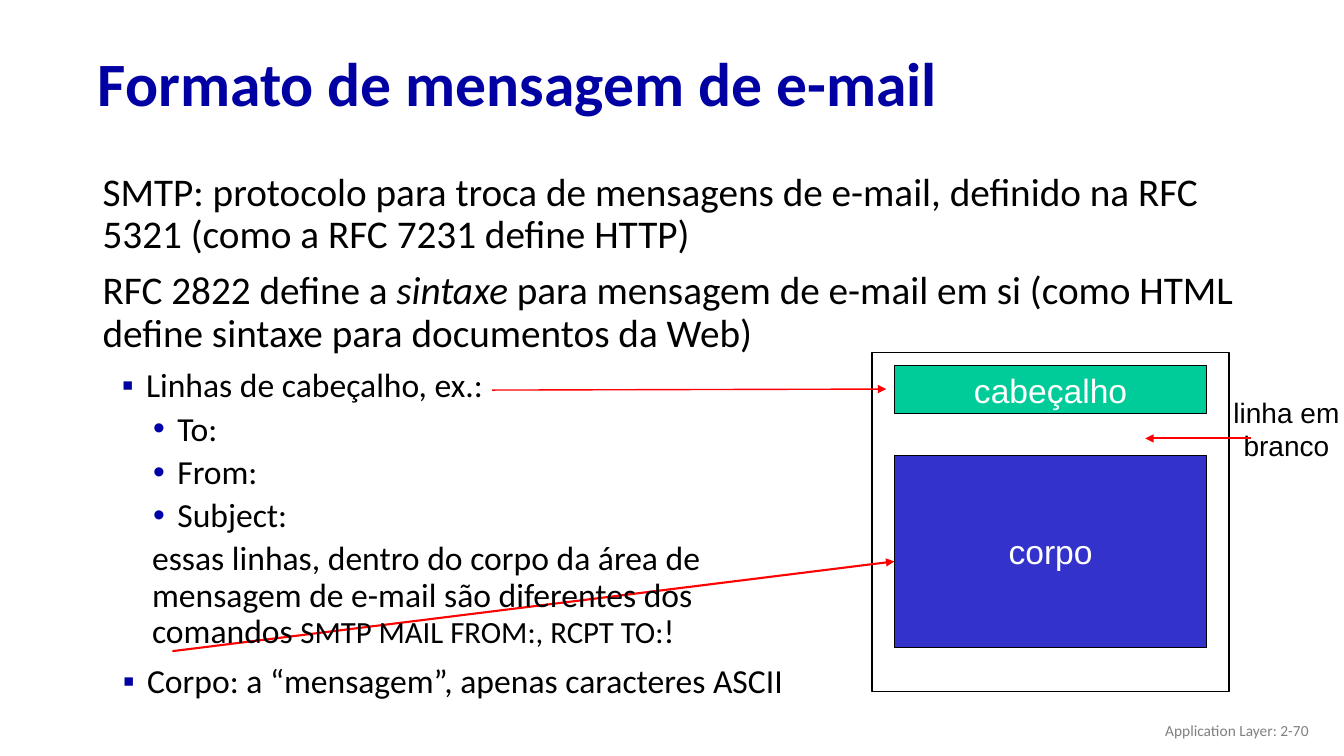
"""Builds the slide on the format of an e-mail message."""
from dataclasses import dataclass

from lxml.etree import SubElement
from pptx import Presentation
from pptx.dml.color import RGBColor
from pptx.enum.shapes import MSO_CONNECTOR as Connector, MSO_SHAPE as Shape
from pptx.enum.text import MSO_ANCHOR as Anchor, PP_ALIGN as Align
from pptx.oxml.ns import qn
from pptx.util import Inches, Pt


@dataclass(frozen=True)
class Theme:
    """Colours, fonts and type sizes of the slide."""
    navy: str = "0000A3"
    bullet_blue: str = "0000A8"
    black: str = "000000"
    white: str = "FFFFFF"
    green: str = "00CC99"
    blue: str = "3333CC"
    red: str = "FF0000"
    grey: str = "808080"
    body_font: str = "Calibri"
    diagram_font: str = "Arial"
    title: int = 44
    intro: int = 28
    detail: int = 24
    command: int = 22
    note: int = 20
    footer: int = 11


THEME = Theme()


def rgb(code):
    """Return the colour for a hex code."""
    return RGBColor.from_string(code)


def set_font(target, size, color, face=THEME.body_font, bold=None):
    """Set the font of a paragraph."""
    font = target.font
    font.size, font.name, font.bold = Pt(size), face, bold
    font.color.rgb = rgb(color)


def set_indent(paragraph, margin, hanging=0, bullet=None, color=THEME.navy):
    """Indent a paragraph and give it a bullet, if any."""
    props = paragraph._p.get_or_add_pPr()
    props.set("marL", str(Inches(margin)))
    props.set("indent", str(Inches(hanging)))
    if bullet:
        tint = SubElement(props, qn("a:buClr"))
        SubElement(tint, qn("a:srgbClr"), val=color)
        SubElement(props, qn("a:buFont"), typeface=THEME.diagram_font)
        SubElement(props, qn("a:buChar"), char=bullet)


def add_text_box(slide, box, anchor=Anchor.TOP, wrap=True):
    """Add an empty text box and return its frame."""
    frame = slide.shapes.add_textbox(*map(Inches, box)).text_frame
    frame.word_wrap = wrap
    frame.vertical_anchor = anchor
    return frame


def next_paragraph(frame, space):
    """Return the first paragraph, or a new one set off by a space."""
    first = frame.paragraphs[0]
    if not first.runs:
        first.line_spacing = 0.9
        return first
    paragraph = frame.add_paragraph()
    paragraph.line_spacing = 0.9
    paragraph.space_before = Pt(space)
    return paragraph


def add_runs(paragraph, *texts):
    """Add runs to a paragraph and return them."""
    runs = [paragraph.add_run() for _ in texts]
    for run, text in zip(runs, texts):
        run.text = text
    return runs


def add_line_of_text(slide, box, text, size, color, align, bold=None):
    """Add a single vertically centred line of text."""
    line = add_text_box(slide, box, Anchor.MIDDLE).paragraphs[0]
    line.text, line.alignment = text, align
    set_font(line, size, color, bold=bold)


def add_block(slide, box, width, fill=None, label=None):
    """Add an outlined rectangle of the message diagram."""
    block = slide.shapes.add_shape(Shape.RECTANGLE, *map(Inches, box))
    block.shadow.inherit = False
    block.line.color.rgb = rgb(THEME.black)
    block.line.width = Pt(width)
    if fill:
        block.fill.solid()
        block.fill.fore_color.rgb = rgb(fill)
    else:
        block.fill.background()
    if label:
        frame = block.text_frame
        frame.word_wrap = False
        frame.vertical_anchor = Anchor.MIDDLE
        caption = frame.paragraphs[0]
        caption.text, caption.alignment = label, Align.CENTER
        set_font(caption, THEME.detail, THEME.white, THEME.diagram_font)


def add_arrow(slide, start, end, width=1.5):
    """Add a red arrow between two points."""
    arrow = slide.shapes.add_connector(
        Connector.STRAIGHT, *map(Inches, (*start, *end)))
    arrow.line.color.rgb = rgb(THEME.red)
    arrow.line.width = Pt(width)
    SubElement(arrow.line._get_or_add_ln(), qn("a:tailEnd"), type="triangle")
    SubElement(arrow._element.spPr, qn("a:effectLst"))


def add_intro(slide):
    """Add the two opening statements."""
    frame = add_text_box(slide, (0.9, 1.66, 11.7, 2.03))
    statements = (
        ("SMTP: protocolo para troca de mensagens de e-mail, definido na "
         "RFC 5321 (como a RFC 7231 define HTTP)",),
        ("RFC 2822 define a ", "sintaxe", " para mensagem de e-mail em si "
         "(como HTML define sintaxe para documentos da Web)"),
    )
    for texts in statements:
        statement = next_paragraph(frame, 10)
        set_indent(statement, 0.02)
        set_font(statement, THEME.intro, THEME.black)
        for run in add_runs(statement, *texts)[1:2]:
            run.font.italic = True


def add_details(slide):
    """Add the bulleted list on header lines and body."""
    frame = add_text_box(slide, (0.97, 3.61, 6.98, 3.32))

    def add_item(texts, level, *indent):
        item = next_paragraph(frame, 5 if level else 10)
        item.level = level
        set_indent(item, *indent)
        set_font(item, THEME.detail, THEME.black)
        return add_runs(item, *texts)

    add_item(["Linhas de cabeçalho, ex.:"], 0, 0.38, -0.24, "▪")
    for field in ("To:", "From:", "Subject:"):
        add_item([field], 1, 0.69, -0.24, "•", THEME.bullet_blue)
    remark = ("essas linhas, dentro do corpo da área de mensagem de e-mail "
              "são diferentes dos comandos ", "SMTP MAIL FROM:, RCPT TO:", "!")
    commands = add_item(remark, 1, 0.44)[1]
    commands.font.size = Pt(THEME.command)
    add_item(["Corpo: a “mensagem”, apenas caracteres ASCII"],
             0, 0.39, -0.24, "▪")


def add_blank_line_note(slide):
    """Add the note that names the blank line."""
    frame = add_text_box(slide, (12.13, 3.87, 1.26, 0.77), wrap=False)
    frame.text = "linha em\nbranco"
    for line in frame.paragraphs:
        line.alignment = Align.CENTER
        set_font(line, THEME.note, THEME.black, THEME.diagram_font)


def main():
    """Build and save the slide."""
    deck = Presentation()
    deck.slide_width, deck.slide_height = Inches(13.33), Inches(7.5)
    slide = deck.slides.add_slide(deck.slide_layouts[6])

    add_line_of_text(slide, (0.87, 0.32, 11.5, 0.98),
                     "Formato de mensagem de e-mail",
                     THEME.title, THEME.navy, Align.LEFT, bold=True)
    add_intro(slide)
    add_block(slide, (8.87, 3.63, 3.1, 0.47), 0.75, THEME.green, "cabeçalho")
    add_block(slide, (8.87, 4.52, 3.1, 1.9), 0.75, THEME.blue, "corpo")
    add_block(slide, (8.65, 3.5, 3.54, 3.36), 1)
    add_arrow(slide, (1.71, 6.46), (8.87, 5.57))
    add_blank_line_note(slide)
    add_arrow(slide, (12.41, 4.35), (11.36, 4.35))
    add_arrow(slide, (4.88, 3.87), (8.79, 3.86), 1)
    add_details(slide)
    add_line_of_text(slide, (10.08, 7.05, 3, 0.4), "Application Layer: 2-70",
                     THEME.footer, THEME.grey, Align.RIGHT)
    deck.save("out.pptx")


if __name__ == "__main__":
    main()
